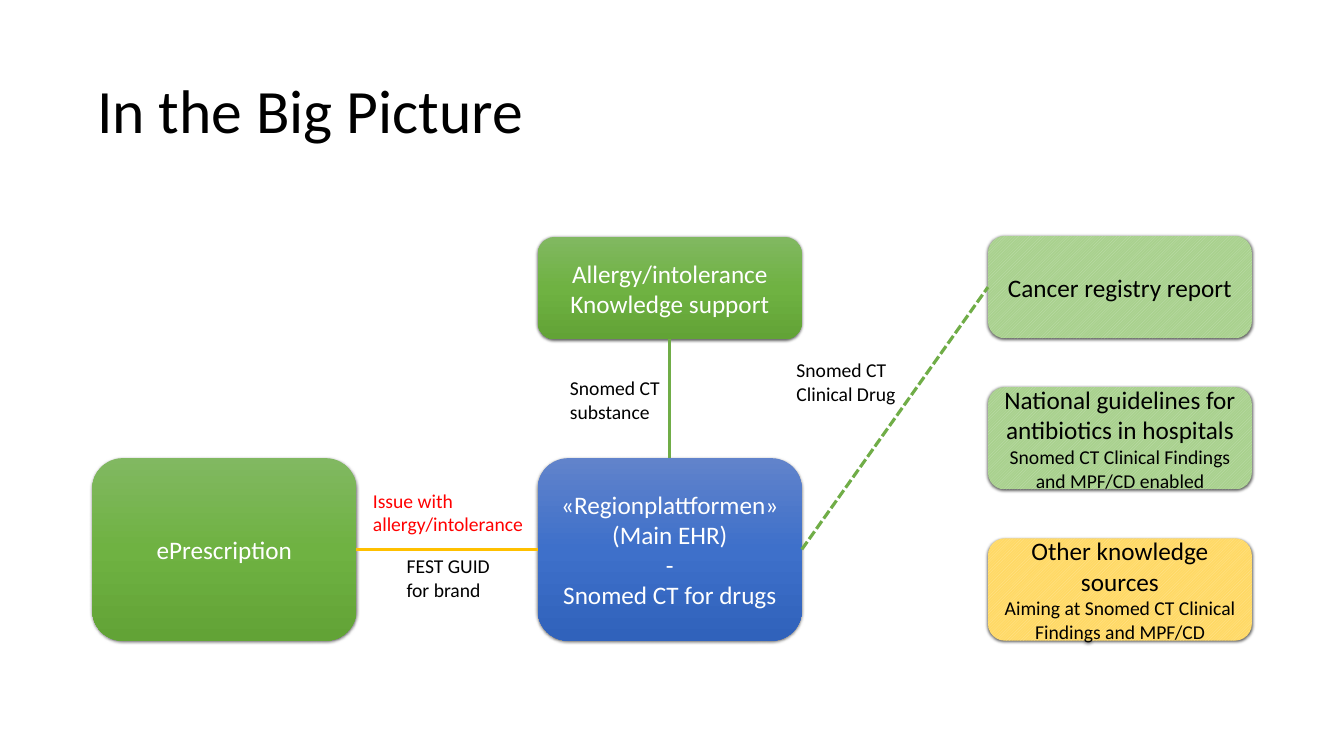
from pptx import Presentation
from pptx import util as u
from pptx.dml.color import RGBColor
from pptx.enum import dml, shapes, text
from pptx.oxml import parse_xml
from pptx.oxml.ns import nsdecls, qn
from copy import deepcopy

FONT = "Calibri"
BLACK, WHITE, RED = "000000", "FFFFFF", "FF0000"
LINE_GREEN, LINE_AMBER = "70AD47", "FFC000"
GREEN = ("81B861", "6FB242", "62A336")
BLUE = ("6183CB", "3E70CA", "3062BB")
PALE_GREEN = ("C5E0B4", "A9D18E")
PALE_AMBER = ("FFE699", "FFD966")
TOP, LEFT, BOTTOM, RIGHT = range(4)
BOX_WIDTH, TALL, SHORT = 13.3, 9.2, 5.16


def rgb(value):
    """Turn a hex string into a colour."""
    return RGBColor.from_string(value)


def write(frame, lines, color, align=text.PP_ALIGN.LEFT):
    """Fill a text frame with (wording, size) lines."""
    frame.word_wrap = True
    frame.text = "\n".join(wording for wording, _ in lines)
    for paragraph, (_, size) in zip(frame.paragraphs, lines):
        paragraph.alignment = align
        font = paragraph.runs[0].font
        font.name, font.size = FONT, u.Pt(size)
        font.color.rgb = rgb(color)


def add_shadow(box):
    """Give a box a soft shadow just below it."""
    box.shadow.inherit = False
    box.element.spPr.find(qn("a:effectLst")).append(parse_xml(
        f'<a:outerShdw {nsdecls("a")} blurRad="57150" dist="19050" dir="5400000" '
        'algn="ctr" rotWithShape="0"><a:srgbClr val="000000">'
        '<a:alpha val="63000"/></a:srgbClr></a:outerShdw>'))


def fill_gradient(box, colors):
    """Fill a box from top to bottom with three even colour stops."""
    box.fill.gradient()
    box.fill.gradient_angle = 270
    stops = box.element.spPr.find(qn("a:gradFill")).find(qn("a:gsLst"))
    stops.insert(1, deepcopy(stops[0]))
    for stop, position, color in zip(box.fill.gradient_stops, (0, 0.5, 1), colors):
        stop.position = position
        stop.color.rgb = rgb(color)


def fill_stripes(box, colors):
    """Fill a box with wide upward diagonals."""
    box.fill.patterned()
    box.fill.pattern = dml.MSO_PATTERN.WIDE_UPWARD_DIAGONAL
    box.fill.fore_color.rgb, box.fill.back_color.rgb = map(rgb, colors)


def add_system(slide, left, top, height, lines, colors):
    """Draw one rounded system box, striped when it has two colours."""
    box = slide.shapes.add_shape(
        shapes.MSO_SHAPE.ROUNDED_RECTANGLE,
        u.Cm(left), u.Cm(top), u.Cm(BOX_WIDTH), u.Cm(height))
    striped = len(colors) == 2
    (fill_stripes if striped else fill_gradient)(box, colors)
    box.line.fill.background()
    add_shadow(box)
    box.text_frame.vertical_anchor = text.MSO_ANCHOR.MIDDLE
    write(box.text_frame, lines, BLACK if striped else WHITE, text.PP_ALIGN.CENTER)
    return box


def add_link(slide, start, start_side, end, end_side, color, dash=None):
    """Join two boxes with a line."""
    link = slide.shapes.add_connector(shapes.MSO_CONNECTOR.STRAIGHT, 0, 0, 0, 0)
    link.begin_connect(start, start_side)
    link.end_connect(end, end_side)
    link.line.color.rgb = rgb(color)
    link.line.width = u.Pt(4.5)
    if dash:
        link.line.dash_style = dash
    link.element.spPr.append(parse_xml(f'<a:effectLst {nsdecls("a")}/>'))


def add_label(slide, left, top, width, wording, color=BLACK):
    """Place the wording that belongs to a link."""
    label = slide.shapes.add_textbox(u.Cm(left), u.Cm(top), u.Cm(width), u.Cm(2.64))
    write(label.text_frame, [(wording, 28)], color)


def add_title(slide, left, top, width, height):
    """Place the slide title."""
    title = slide.shapes.add_textbox(u.Cm(left), u.Cm(top), u.Cm(width), u.Cm(height))
    title.text_frame.vertical_anchor = text.MSO_ANCHOR.MIDDLE
    write(title.text_frame, [("In the Big Picture", 88)], BLACK)
    title.text_frame.paragraphs[0].line_spacing = 0.9


def add_core(slide, left, top):
    """Draw the prescription, record and allergy systems with their links."""
    record_left, record_top = left + 22.45, top + 11.15
    record = add_system(slide, record_left, record_top, TALL, [
        ("«Regionplattformen»", 36), ("(Main EHR)", 36), ("-", 36),
        ("Snomed CT for drugs", 36)], BLUE)
    allergy = add_system(slide, record_left, top, SHORT, [
        ("Allergy/intolerance", 36), ("Knowledge support", 36)], GREEN)
    prescription = add_system(
        slide, left, record_top, TALL, [("ePrescription", 36)], GREEN)
    add_link(slide, record, TOP, allergy, BOTTOM, LINE_GREEN)
    add_link(slide, record, LEFT, prescription, RIGHT, LINE_AMBER)
    add_label(slide, left + 23.82, top + 6.88, 5.56, "Snomed CT substance")
    add_label(slide, left + 15.59, top + 15.87, 5.56, "FEST GUID for brand")
    add_label(slide, left + 13.89, top + 12.55, 8.13,
              "Issue with allergy/intolerance", RED)
    return record


def add_receivers(slide, left, top, record):
    """Stack the receiving sources and link the record to the first."""
    receivers = [
        ([("Cancer registry report", 36)], PALE_GREEN),
        ([("National guidelines for antibiotics in hospitals", 36),
          ("Snomed CT Clinical Findings and MPF/CD enabled", 28)], PALE_GREEN),
        ([("Other knowledge sources", 36),
          ("Aiming at Snomed CT Clinical Findings and MPF/CD", 28)], PALE_AMBER),
    ]
    registry, *_ = [
        add_system(slide, left, top + row * 7.62, SHORT, lines, colors)
        for row, (lines, colors) in enumerate(receivers)]
    add_link(slide, record, RIGHT, registry, LEFT, LINE_GREEN, dml.MSO_LINE.SQUARE_DOT)
    add_label(slide, left - 9.9, top + 6.04, 7.06, "Snomed CT Clinical Drug")


def main():
    """Build and save the slide."""
    deck = Presentation()
    deck.slide_width, deck.slide_height = u.Cm(67.72), u.Cm(38.1)
    slide = deck.slides.add_slide(deck.slide_layouts[6])
    add_title(slide, 4.65, 2.03, 58.42, 7.37)
    record = add_core(slide, 4.65, 11.94)
    add_receivers(slide, 49.78, 11.89, record)
    deck.save("out.pptx")


if __name__ == "__main__":
    main()
